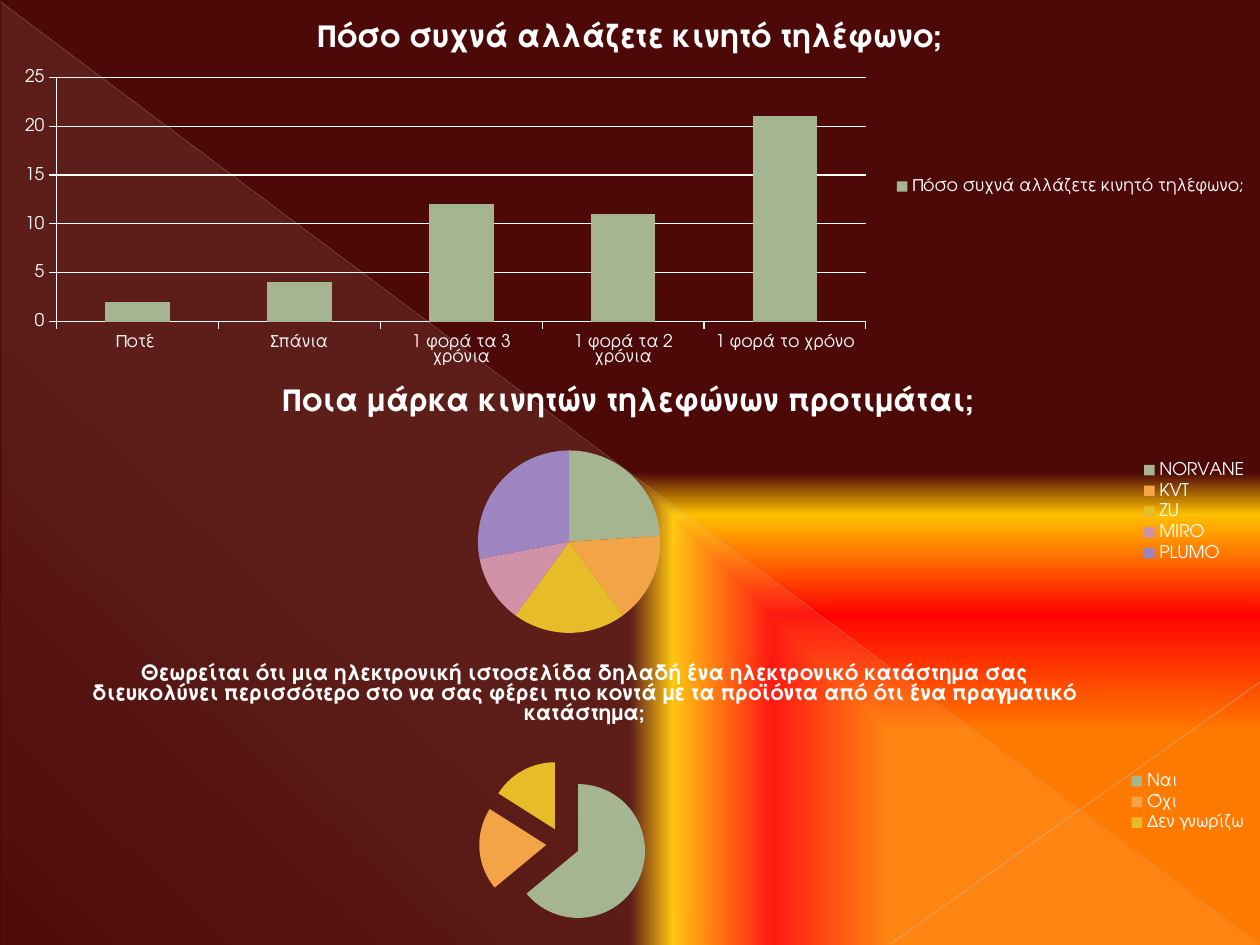
from dataclasses import dataclass

from lxml import etree
from pptx import Presentation
from pptx.chart.data import CategoryChartData
from pptx.dml.color import RGBColor
from pptx.enum.chart import XL_CHART_TYPE, XL_LEGEND_POSITION, XL_TICK_MARK
from pptx.enum.shapes import MSO_CONNECTOR, MSO_SHAPE
from pptx.oxml import parse_xml
from pptx.oxml.ns import nsdecls, qn
from pptx.util import Cm, Pt

COLUMN = XL_CHART_TYPE.COLUMN_STACKED
PIE = XL_CHART_TYPE.PIE
LEGEND_RIGHT = XL_LEGEND_POSITION.RIGHT
TICK_OUTSIDE = XL_TICK_MARK.OUTSIDE
TICK_NONE = XL_TICK_MARK.NONE
STRAIGHT = MSO_CONNECTOR.STRAIGHT
RIGHT_TRIANGLE = MSO_SHAPE.RIGHT_TRIANGLE


@dataclass(frozen=True)
class Theme:
    font: str = "TeX Gyre Adventor"
    text: str = "FFFFFF"
    accents: tuple = ("A5B592", "F3A447", "E7BC29", "D092A7", "9C85C0")
    # Gradient stops: position %, colour, opacity %
    glow: tuple = ((45, "FF7A00", 100), (70, "FF0300", 100),
                   (91, "FFC000", 79), (100, "4D0808", 100))
    sheen: tuple = ((0, "FEFAC9", 10), (70, "FEFAC9", 8), (100, "FEFAC9", 1))
    label_size: int = 10
    long_title_size: int = 12
    title_size: int = 18


THEME = Theme()
WIDTH, HEIGHT = 25.4, 19.05

FREQUENCY = "Πόσο συχνά αλλάζετε κινητό τηλέφωνο;"
FREQUENCY_ANSWERS = {"Ποτέ ": 2, "Σπάνια": 4, "1 φορά τα 3 χρόνια": 12,
                     "1 φορά τα 2 χρόνια": 11, "1 φορά το χρόνο": 21}
BRAND = "Ποια μάρκα κινητών τηλεφώνων προτιμάται;"
BRAND_ANSWERS = {"NORVANE": 24, "KVT": 16, "ZU": 20, "MIRO": 12, "PLUMO": 28}
ONLINE_SHOP = ("Θεωρείται ότι μια ηλεκτρονική ιστοσελίδα δηλαδή ένα ηλεκτρονικό "
               "κατάστημα σας διευκολύνει περισσότερο στο να σας φέρει πιο κοντά "
               "με τα προϊόντα από ότι ένα πραγματικό κατάστημα;")
ONLINE_SHOP_ANSWERS = {"Ναι": 64, "Όχι": 20, "Δεν γνωρίζω": 16}


def rgb(hex_code):
    return RGBColor.from_string(hex_code)


def set_gradient(fill_parent, stops, direction):
    """Replace the gradient under fill_parent; direction is the XML after the stops."""
    stop_xml = "".join(
        f'<a:gs pos="{position * 1000}"><a:srgbClr val="{color}">'
        f'<a:alpha val="{opacity * 1000}"/></a:srgbClr></a:gs>'
        for position, color, opacity in stops)
    gradient = parse_xml(f'<a:gradFill {nsdecls("a")} rotWithShape="1">'
                         f'<a:gsLst>{stop_xml}</a:gsLst>{direction}</a:gradFill>')
    old = fill_parent.find(qn("a:gradFill"))
    fill_parent.replace(old, gradient)


def paint_background(slide):
    slide.background.fill.gradient()
    properties = next(slide.element.iter(qn("p:bgPr")))
    set_gradient(properties, THEME.glow,
                 '<a:path path="rect"><a:fillToRect l="100000" t="100000"/></a:path>'
                 '<a:tileRect r="-100000" b="-100000"/>')


def add_ray(slide, start, end, color, weight, opacity):
    ray = slide.shapes.add_connector(STRAIGHT, *map(Cm, start + end))
    ray.line.color.rgb = rgb(color)
    ray.line.width = Pt(weight)
    tint = next(ray.element.iter(qn("a:srgbClr")))
    etree.SubElement(tint, qn("a:alpha"), val=str(opacity * 1000))
    etree.SubElement(ray.element.spPr, qn("a:effectLst"))


def add_backdrop(slide, left, top, width, height):
    """Translucent triangle with two thin diagonal rays."""
    triangle = slide.shapes.add_shape(RIGHT_TRIANGLE, Cm(left + 0.03), Cm(top + 0.05),
                                      Cm(width - 0.05), Cm(height - 0.05))
    triangle.shadow.inherit = False
    triangle.line.fill.background()
    triangle.fill.gradient()
    set_gradient(triangle.element.spPr, THEME.sheen,
                 f'<a:lin ang="{133 * 60000}" scaled="0"/>')
    right, bottom = left + width, top + height
    add_ray(slide, (left, top + 0.03), (right - 0.03, bottom - 0.03), "BABDB3", 0.39, 35)
    add_ray(slide, (right, bottom - 5.3), (right - 7.44, bottom - 0.03), "C1C4BC", 0.47, 45)


def place_title(chart, x, y):
    """Pin the title's corner at fractions of the chart's width and height."""
    layout = parse_xml(
        f'<c:layout {nsdecls("c")}><c:manualLayout><c:xMode val="edge"/>'
        f'<c:yMode val="edge"/><c:x val="{x}"/><c:y val="{y}"/>'
        '</c:manualLayout></c:layout>')
    title = chart.chart_title._element
    for old in title.findall(qn("c:layout")):
        title.remove(old)
    title.find(qn("c:tx")).addnext(layout)


def add_survey_chart(slide, kind, box, question, answers, title_size):
    """Chart with the question as title and a legend on the right."""
    data = CategoryChartData()
    data.categories = list(answers)
    data.add_series(question, list(answers.values()))
    chart = slide.shapes.add_chart(kind, *map(Cm, box), data).chart
    chart.font.name = THEME.font
    chart.font.size = Pt(THEME.label_size)
    chart.font.color.rgb = rgb(THEME.text)

    chart.has_title = True
    chart.chart_title.include_in_layout = False
    chart.chart_title.text_frame.text = question
    title_font = chart.chart_title.text_frame.paragraphs[0].runs[0].font
    title_font.name = THEME.font
    title_font.size = Pt(title_size)
    title_font.bold = True
    title_font.color.rgb = rgb(THEME.text)

    chart.has_legend = True
    chart.legend.position = LEGEND_RIGHT
    chart.legend.include_in_layout = False
    return chart


def paint(fmt, color):
    fmt.fill.solid()
    fmt.fill.fore_color.rgb = rgb(color)


def add_column_survey(slide, box, question, answers):
    chart = add_survey_chart(slide, COLUMN, box, question, answers, THEME.title_size)
    plot = chart.plots[0]
    plot.vary_by_categories = False
    plot.gap_width = 150
    plot.overlap = 100
    paint(plot.series[0].format, THEME.accents[0])
    chart.value_axis.has_major_gridlines = True
    gridlines = chart.value_axis.major_gridlines
    for part in (chart.category_axis, chart.value_axis, gridlines):
        part.format.line.color.rgb = rgb(THEME.text)
        part.format.line.width = Pt(0.75)
    for axis in (chart.category_axis, chart.value_axis):
        axis.major_tick_mark = TICK_OUTSIDE
        axis.minor_tick_mark = TICK_NONE


def add_pie_survey(slide, box, question, answers, title_size, title_at, explosion=0):
    chart = add_survey_chart(slide, PIE, box, question, answers, title_size)
    place_title(chart, *title_at)
    plot = chart.plots[0]
    plot.vary_by_categories = True
    series = plot.series[0]
    if explosion:
        pull = parse_xml(f'<c:explosion {nsdecls("c")} val="{explosion}"/>')
        series._element.find(qn("c:tx")).addnext(pull)
    for index, color in enumerate(THEME.accents[:len(answers)]):
        paint(series.points[index].format, color)


def main():
    deck = Presentation()
    deck.slide_width, deck.slide_height = Cm(WIDTH), Cm(HEIGHT)
    slide = deck.slides.add_slide(deck.slide_layouts[6])
    paint_background(slide)
    add_backdrop(slide, 0, 0, WIDTH, HEIGHT)
    add_column_survey(slide, (0, 0, WIDTH, 7.52), FREQUENCY, FREQUENCY_ANSWERS)
    add_pie_survey(slide, (0, 7.52, WIDTH, 5.59), BRAND, BRAND_ANSWERS,
                   THEME.title_size, title_at=(0.22, 0.02))
    add_pie_survey(slide, (0, 13.28, WIDTH, 5.77), ONLINE_SHOP, ONLINE_SHOP_ANSWERS,
                   THEME.long_title_size, title_at=(0.07, -0.02), explosion=25)
    deck.save("out.pptx")


if __name__ == "__main__":
    main()
